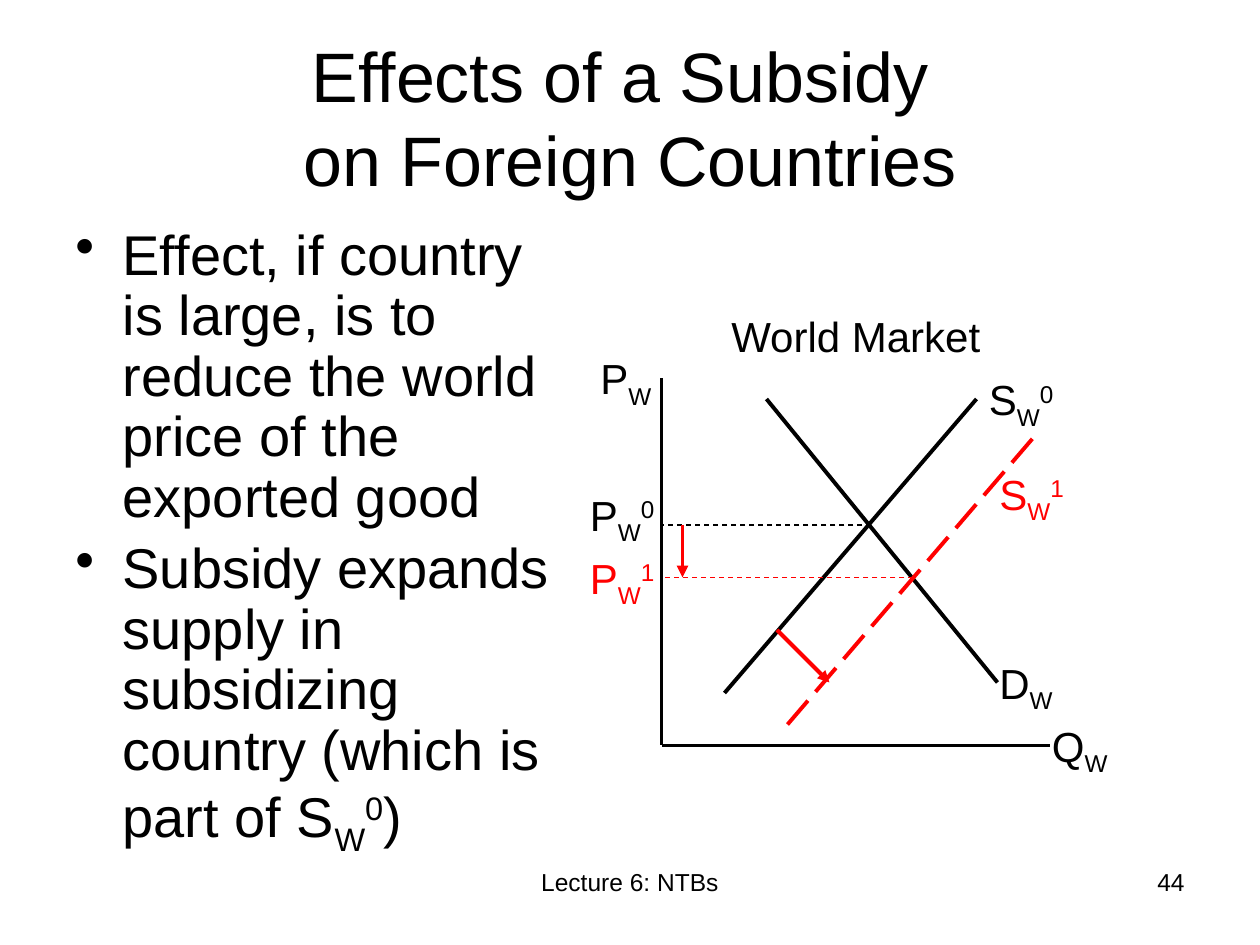
"""Builds the slide on how a subsidy affects foreign countries."""
from itertools import groupby

from lxml.etree import SubElement
from pptx import Presentation
from pptx.dml.color import RGBColor
from pptx.enum.dml import MSO_LINE_DASH_STYLE as Dash
from pptx.enum.shapes import MSO_CONNECTOR as Connector
from pptx.enum.text import MSO_ANCHOR as Anchor, MSO_AUTO_SIZE as AutoSize, PP_ALIGN as Align
from pptx.oxml.ns import qn
from pptx.util import Pt

EMU_PER_PX = 9525
COLORS = {"ink": "000000", "shift": "FF0000"}
BASELINES = {"_": -25000, "^": 30000}


def px(length):
    return length * EMU_PER_PX


def split_scripts(text):
    letters, baseline = [], 0
    for letter in text:
        if letter in BASELINES:
            baseline = BASELINES[letter]
        else:
            letters.append((letter, baseline))
            baseline = 0
    for baseline, group in groupby(letters, key=lambda pair: pair[1]):
        yield "".join(letter for letter, _ in group), baseline


def write(para, text, size=24, color="ink", align=Align.LEFT, font="Arial"):
    para.alignment = align
    for number, line in enumerate(text.split("\n")):
        if number:
            para.add_line_break()
        for piece, baseline in split_scripts(line):
            span = para.add_run()
            span.text = piece
            span.font.name = font
            span.font.size = Pt(size)
            span.font.color.rgb = RGBColor.from_string(COLORS[color])
            if baseline:
                span._r.get_or_add_rPr().set("baseline", str(baseline))


class MarketSlide:
    def __init__(self, deck):
        self.page = deck.slides.add_slide(deck.slide_layouts[5])

    def title(self, text, left, top, width, height):
        box = self.page.shapes.title
        box.left, box.top, box.width, box.height = map(px, (left, top, width, height))
        frame = box.text_frame
        frame.auto_size = AutoSize.NONE
        frame.vertical_anchor = Anchor.MIDDLE
        write(frame.paragraphs[0], text, size=40, align=Align.CENTER)

    def frame(self, left, top, width, height):
        box = self.page.shapes.add_textbox(*map(px, (left, top, width, height)))
        box.text_frame.word_wrap = True
        return box.text_frame

    def text(self, text, left, top, width, height=48, **style):
        write(self.frame(left, top, width, height).paragraphs[0], text, **style)

    def bullets(self, items, left, top, width, height, indent=36):
        frame = self.frame(left, top, width, height)
        for number, item in enumerate(items):
            para = frame.add_paragraph() if number else frame.paragraphs[0]
            para.line_spacing = 0.9
            para.space_before = Pt(6.4)
            write(para, item, size=32)
            properties = para._p.get_or_add_pPr()
            properties.set("marL", str(px(indent)))
            properties.set("indent", str(-px(indent)))
            SubElement(properties, qn("a:buChar"), char="•")

    def line(self, x1, y1, x2, y2, color="ink", width=2.25, dash=None, arrow=False):
        line = self.page.shapes.add_connector(Connector.STRAIGHT, *map(px, (x1, y1, x2, y2)))
        line.line.color.rgb = RGBColor.from_string(COLORS[color])
        line.line.width = Pt(width)
        if dash:
            line.line.dash_style = dash
        if arrow:
            SubElement(line.line._get_or_add_ln(), qn("a:tailEnd"), type="triangle")
        SubElement(line._element.spPr, qn("a:effectLst"))


def main():
    deck = Presentation()
    deck.slide_width, deck.slide_height = px(960), px(720)
    slide = MarketSlide(deck)

    slide.text("Lecture 6: NTBs", 328, 656, 304, 50, size=14, align=Align.CENTER)
    slide.text("44", 688, 656, 224, 50, size=14, align=Align.RIGHT)
    slide.title("Effects of a Subsidy \non Foreign Countries", 48, 29, 864, 120)
    slide.bullets([
        "Effect, if country is large, is to reduce the world price of the exported good",
        "Subsidy expands supply in subsidizing country (which is part of S_W^0)",
    ], 48, 168, 384, 475)

    axis_x, axis_y, old_price, new_price = 504, 568, 400, 440
    slide.line(axis_x, 288, axis_x, axis_y)
    slide.line(axis_x, axis_y, 800, axis_y)
    slide.line(552, 528, 744, 304)
    slide.line(584, 304, 760, 520)
    slide.line(664, old_price, axis_x, old_price, width=0.75, dash=Dash.DASH)
    slide.line(696, new_price, axis_x, new_price, "shift", width=0.75, dash=Dash.DASH)

    slide.text("World Market", 544, 232, 216, align=Align.CENTER)
    for label, left, top, width, color in (
        ("S_W^0", 744, 280, 80, "ink"),
        ("D_W", 752, 496, 80, "ink"),
        ("S_W^1", 752, 352, 96, "shift"),
        ("P_W^1", 440, 416, 80, "shift"),
        ("P_W^0", 440, 368, 80, "ink"),
        ("Q_W", 792, 544, 72, "ink"),
        ("P_W", 448, 264, 72, "ink"),
    ):
        slide.text(label, left, top, width, color=color)

    slide.line(520, old_price, 520, new_price, "shift", arrow=True)
    slide.line(592, 480, 632, 520, "shift", arrow=True)
    slide.line(600, 552, 792, 328, "shift", dash=Dash.LONG_DASH)
    deck.save("out.pptx")


if __name__ == "__main__":
    main()
